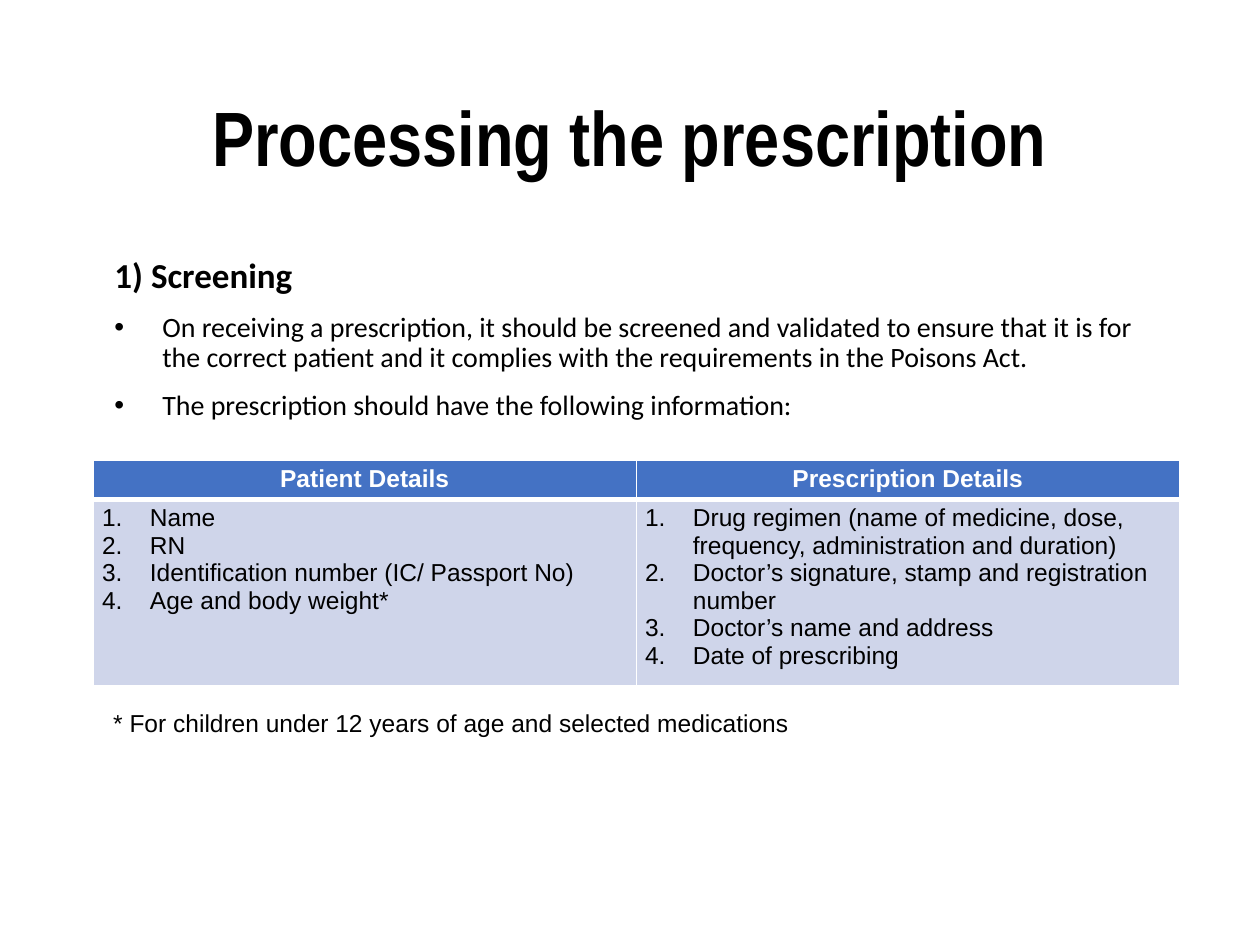
"""Build the slide about processing and screening a prescription."""
from lxml.etree import SubElement
from pptx import Presentation
from pptx.dml.color import RGBColor
from pptx.enum.text import MSO_ANCHOR, PP_ALIGN
from pptx.oxml import parse_xml
from pptx.oxml.ns import nsdecls, qn
from pptx.util import Inches, Pt

BLACK = RGBColor(0x00, 0x00, 0x00)
WHITE = RGBColor(0xFF, 0xFF, 0xFF)
BLUE = RGBColor(0x44, 0x72, 0xC4)
PALE_BLUE = RGBColor(0xCF, 0xD5, 0xEA)

TITLE = "Processing the prescription"
HEADING = "1) Screening"
POINTS = [
    "On receiving a prescription, it should be screened and validated to ensure that it is for "
    "the correct patient and it complies with the requirements in the Poisons Act.",
    "The prescription should have the following information:",
]
DETAILS = {
    "Patient Details": [
        "Name",
        "RN",
        "Identification number (IC/ Passport No)",
        "Age and body weight*",
    ],
    "Prescription Details": [
        "Drug regimen (name of medicine, dose, frequency, administration and duration)",
        "Doctor’s signature, stamp and registration number",
        "Doctor’s name and address",
        "Date of prescribing",
    ],
}
FOOTNOTE = "* For children under 12 years of age and selected medications"
WIDTH = 8.62
ROW_HEIGHTS = [0.3, 1.38]


def write(frame, text, font="Arial", size=14, color=BLACK, bold=False, align=PP_ALIGN.LEFT,
          line=None, before=0, margin=0, hanging=0, bullet=None):
    """Add one formatted paragraph, filling the frame's first one if it is empty."""
    first = frame.paragraphs[0]
    is_first = not first.runs
    para = first if is_first else frame.add_paragraph()
    properties = para._p.get_or_add_pPr()
    properties.set("marL", str(Inches(margin)))
    properties.set("indent", str(-Inches(hanging)))
    if bullet == "number":
        SubElement(properties, qn("a:buFont"), typeface="+mj-lt")
        SubElement(properties, qn("a:buAutoNum"), type="arabicPeriod")
    elif bullet:
        SubElement(properties, qn("a:buFont"), typeface="Arial")
        SubElement(properties, qn("a:buChar"), char=bullet)
    para.alignment = align
    para.line_spacing = line
    para.space_before = Pt(0 if is_first else before)
    span = para.add_run()
    span.text = text
    span.font.name = font
    span.font.size = Pt(size)
    span.font.bold = bold
    span.font.color.rgb = color


def add_box(page, left, top, width, height):
    box = page.shapes.add_textbox(Inches(left), Inches(top), Inches(width), Inches(height))
    box.text_frame.word_wrap = True
    return box.text_frame


def style_cell(cell, fill, top, bottom):
    cell.fill.solid()
    cell.fill.fore_color.rgb = fill
    cell.margin_left = cell.margin_right = Inches(0.07)
    cell.margin_top = cell.margin_bottom = Inches(0.04)
    borders = {"lnL": 1, "lnR": 1, "lnT": top, "lnB": bottom}
    for position, (side, points) in enumerate(borders.items()):
        cell._tc.get_or_add_tcPr().insert(position, parse_xml(
            f'<a:{side} {nsdecls("a")} w="{Pt(points)}"><a:solidFill>'
            f'<a:srgbClr val="{WHITE}"/></a:solidFill></a:{side}>'))


def add_details(page):
    table = page.shapes.add_table(
        len(ROW_HEIGHTS), len(DETAILS), Inches(0.74), Inches(3.65),
        Inches(WIDTH), Inches(sum(ROW_HEIGHTS))).table
    for row, height in zip(table.rows, ROW_HEIGHTS):
        row.height = Inches(height)
    for column, (header, items) in enumerate(DETAILS.items()):
        head, body = table.cell(0, column), table.cell(1, column)
        style_cell(head, BLUE, top=1, bottom=3)
        style_cell(body, PALE_BLUE, top=3, bottom=1)
        write(head.text_frame, header, color=WHITE, bold=True, align=PP_ALIGN.CENTER)
        for item in items:
            write(body.text_frame, item, margin=0.38, hanging=0.38, bullet="number")


def main():
    deck = Presentation()
    deck.slide_width, deck.slide_height = Inches(10), Inches(7.5)
    page = deck.slides.add_slide(deck.slide_layouts[5])

    title = page.shapes.title
    title.left, title.top = Inches(0.69), Inches(0.4)
    title.width, title.height = Inches(WIDTH), Inches(1.45)
    title.text_frame.vertical_anchor = MSO_ANCHOR.MIDDLE
    write(title.text_frame, TITLE, font="Arial Narrow", size=44, bold=True,
          align=PP_ALIGN.CENTER, line=0.9)

    screening = add_box(page, 0.69, 2, WIDTH, 4.76)
    write(screening, HEADING, font="Calibri", size=20, bold=True, line=0.9, margin=0.12)
    for point in POINTS:
        write(screening, point, font="Calibri", size=16, line=0.9, before=10,
              margin=0.5, hanging=0.38, bullet="•")

    add_details(page)
    write(add_box(page, 0.8, 5.57, WIDTH, 0.34), FOOTNOTE)
    deck.save("out.pptx")


if __name__ == "__main__":
    main()
